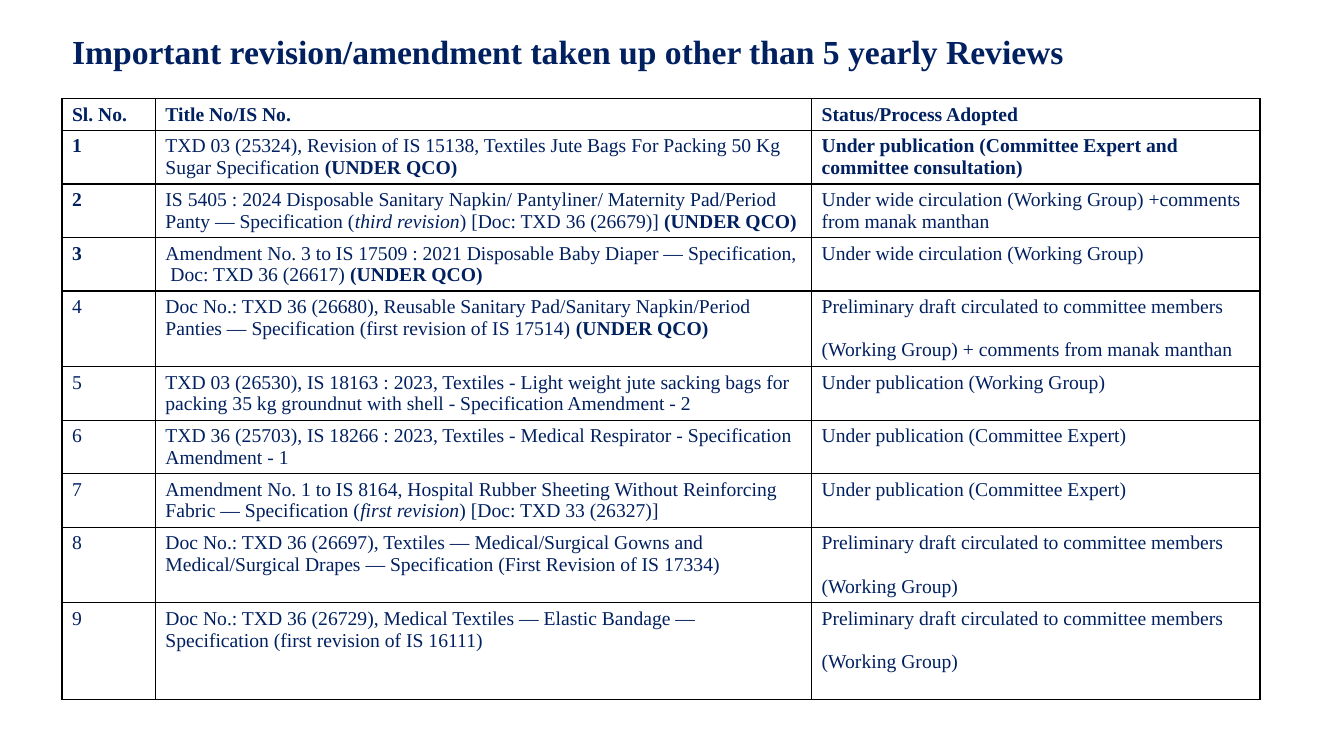
from lxml import etree
from pptx import Presentation
from pptx import util as u
from pptx.dml.color import RGBColor
from pptx.enum import text
from pptx.oxml.ns import qn

EMU_PER_PX = 9525
FONT = "Times New Roman"
NAVY = "002060"
BLACK = "000000"
BORDER_WIDTH = 12700
TITLE = "Important revision/amendment taken up other than 5 yearly Reviews"

COLUMN_WIDTHS = [89, 625, 427]
ROW_HEIGHTS = [30, 51, 51, 51, 72, 51, 51, 51, 72, 92]

UNDER_QCO = ("(UNDER QCO)", "b")
DRAFT = "Preliminary draft circulated to committee members"
EXPERT = "Under publication (Committee Expert)"

# Each cell is a list of paragraphs; each paragraph is a list of (text, style) runs.
ROWS = [
    [[[("Sl. No.", "b")]], [[("Title No/IS No.", "b")]],
     [[("Status/Process Adopted", "b")]]],
    [[[("1", "b")]],
     [[("TXD 03 (25324), Revision of IS 15138, Textiles Jute Bags For Packing "
        "50 Kg Sugar Specification ", ""), UNDER_QCO]],
     [[("Under publication (Committee Expert and committee consultation)", "b")]]],
    [[[("2", "b")]],
     [[("IS 5405 : 2024 Disposable Sanitary Napkin/ Pantyliner/ Maternity "
        "Pad/Period Panty — Specification (", ""), ("third revision", "i"),
       (") [Doc: TXD 36 (26679)] ", ""), UNDER_QCO]],
     [[("Under wide circulation (Working Group) +comments from manak manthan", "")]]],
    [[[("3", "b")]],
     [[("Amendment No. 3 to IS 17509 : 2021 Disposable Baby Diaper — "
        "Specification,  Doc: TXD 36 (26617) ", ""), UNDER_QCO]],
     [[("Under wide circulation (Working Group)", "")]]],
    [[[("4", "")]],
     [[("Doc No.: TXD 36 (26680), Reusable Sanitary Pad/Sanitary Napkin/Period "
        "Panties — Specification (first revision of IS 17514) ", ""), UNDER_QCO]],
     [[(DRAFT, "")], [("(Working Group) + comments from manak manthan", "")]]],
    [[[("5", "")]],
     [[("TXD 03 (26530), IS 18163 : 2023, Textiles - Light weight jute sacking bags "
        "for packing 35 kg groundnut with shell - Specification Amendment - 2", "")]],
     [[("Under publication (Working Group)", "")]]],
    [[[("6", "")]],
     [[("TXD 36 (25703), IS 18266 : 2023, Textiles - Medical Respirator - "
        "Specification Amendment - 1", "")]],
     [[(EXPERT, "")]]],
    [[[("7", "")]],
     [[("Amendment No. 1 to IS 8164, Hospital Rubber Sheeting Without Reinforcing "
        "Fabric — Specification (", ""), ("first revision", "i"),
       (") [Doc: TXD 33 (26327)]", "")]],
     [[(EXPERT, "")]]],
    [[[("8", "")]],
     [[("Doc No.: TXD 36 (26697), Textiles — Medical/Surgical Gowns and "
        "Medical/Surgical Drapes — Specification (First Revision of IS 17334)", "")]],
     [[(DRAFT, "")], [("(Working Group)", "")]]],
    [[[("9", "")]],
     [[("Doc No.: TXD 36 (26729), Medical Textiles — Elastic Bandage — "
        "Specification (first revision of IS 16111)", "")]],
     [[(DRAFT, "")], [("(Working Group)", "")]]],
]


def px(length):
    return u.Emu(length * EMU_PER_PX)


def color(value):
    return RGBColor.from_string(value)


def add_span(para, words, size, style):
    """Add one run; style may hold b for bold and i for italic."""
    span = para.add_run()
    span.text = words
    span.font.name = FONT
    span.font.size = u.Pt(size)
    span.font.bold = "b" in style
    span.font.italic = "i" in style
    span.font.color.rgb = color(NAVY)


def add_title(page):
    box = page.shapes.title
    box.left, box.top, box.width, box.height = px(59), px(9), px(1104), px(85)
    frame = box.text_frame
    frame.word_wrap = True
    frame.vertical_anchor = text.MSO_ANCHOR.MIDDLE
    para = frame.paragraphs[0]
    para.alignment = text.PP_ALIGN.LEFT
    para.line_spacing = 0.9
    add_span(para, TITLE, 24, "b")


def add_borders(cell):
    properties = cell._tc.get_or_add_tcPr()
    for side in ("a:lnL", "a:lnR", "a:lnT", "a:lnB"):
        line = etree.SubElement(properties, qn(side), w=str(BORDER_WIDTH))
        fill = etree.SubElement(line, qn("a:solidFill"))
        etree.SubElement(fill, qn("a:srgbClr"), val=BLACK)


def fill_cell(cell, paragraphs):
    add_borders(cell)
    cell.fill.background()
    frame = cell.text_frame
    for index, spans in enumerate(paragraphs):
        para = frame.add_paragraph() if index else frame.paragraphs[0]
        if index:
            para.space_before = u.Pt(15.5)
        for words, style in spans:
            add_span(para, words, 14, style)


def add_status_table(page):
    frame = page.shapes.add_table(
        len(ROWS), len(COLUMN_WIDTHS), px(59), px(94),
        px(sum(COLUMN_WIDTHS)), px(sum(ROW_HEIGHTS)))
    table = frame.table
    table.first_row = table.horz_banding = False
    for column, width in zip(table.columns, COLUMN_WIDTHS):
        column.width = px(width)
    for row, height, contents in zip(table.rows, ROW_HEIGHTS, ROWS):
        row.height = px(height)
        for cell, paragraphs in zip(row.cells, contents):
            fill_cell(cell, paragraphs)


def main():
    deck = Presentation()
    deck.slide_width, deck.slide_height = px(1280), px(720)
    page = deck.slides.add_slide(deck.slide_layouts[5])
    add_title(page)
    add_status_table(page)
    deck.save("out.pptx")


if __name__ == "__main__":
    main()
